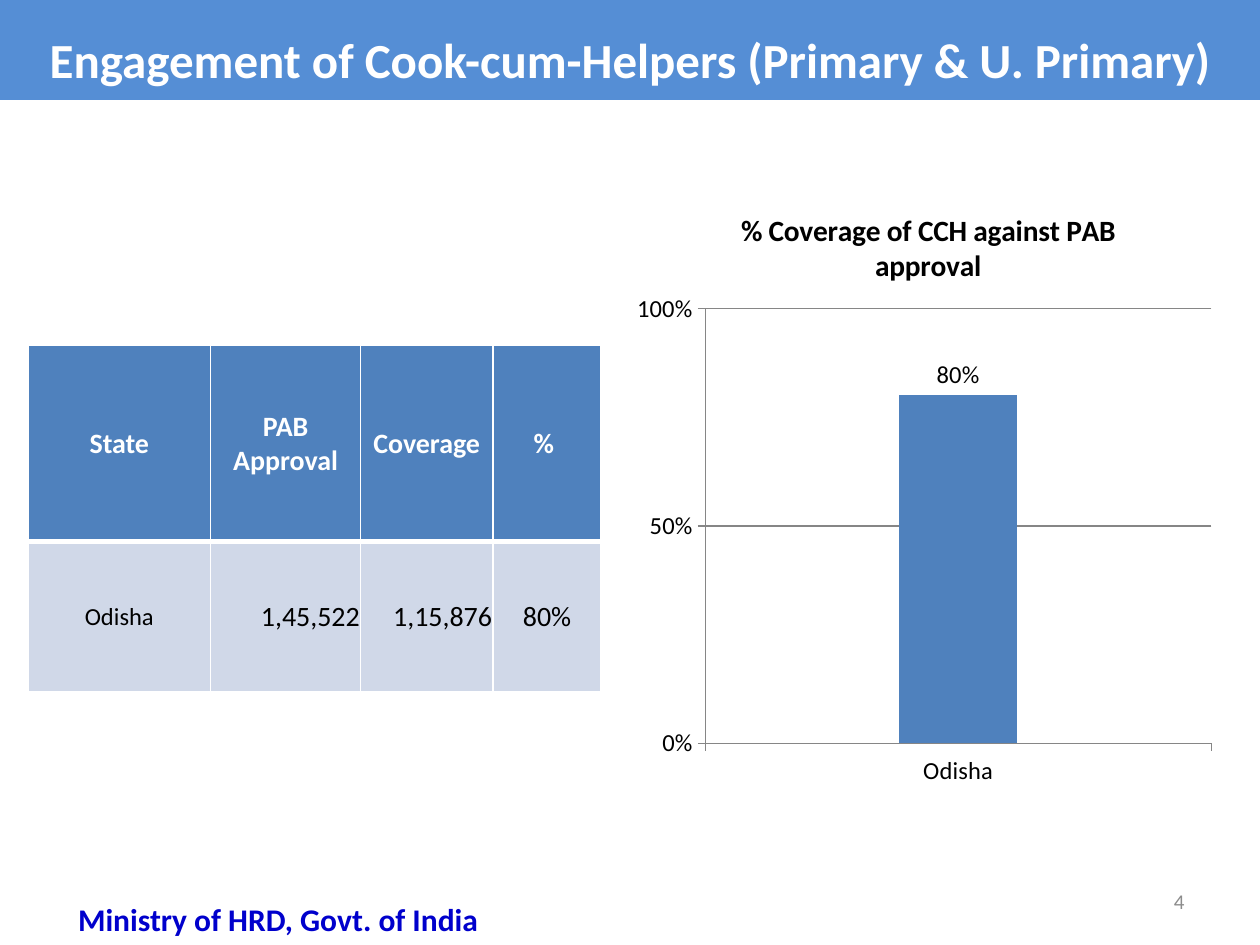
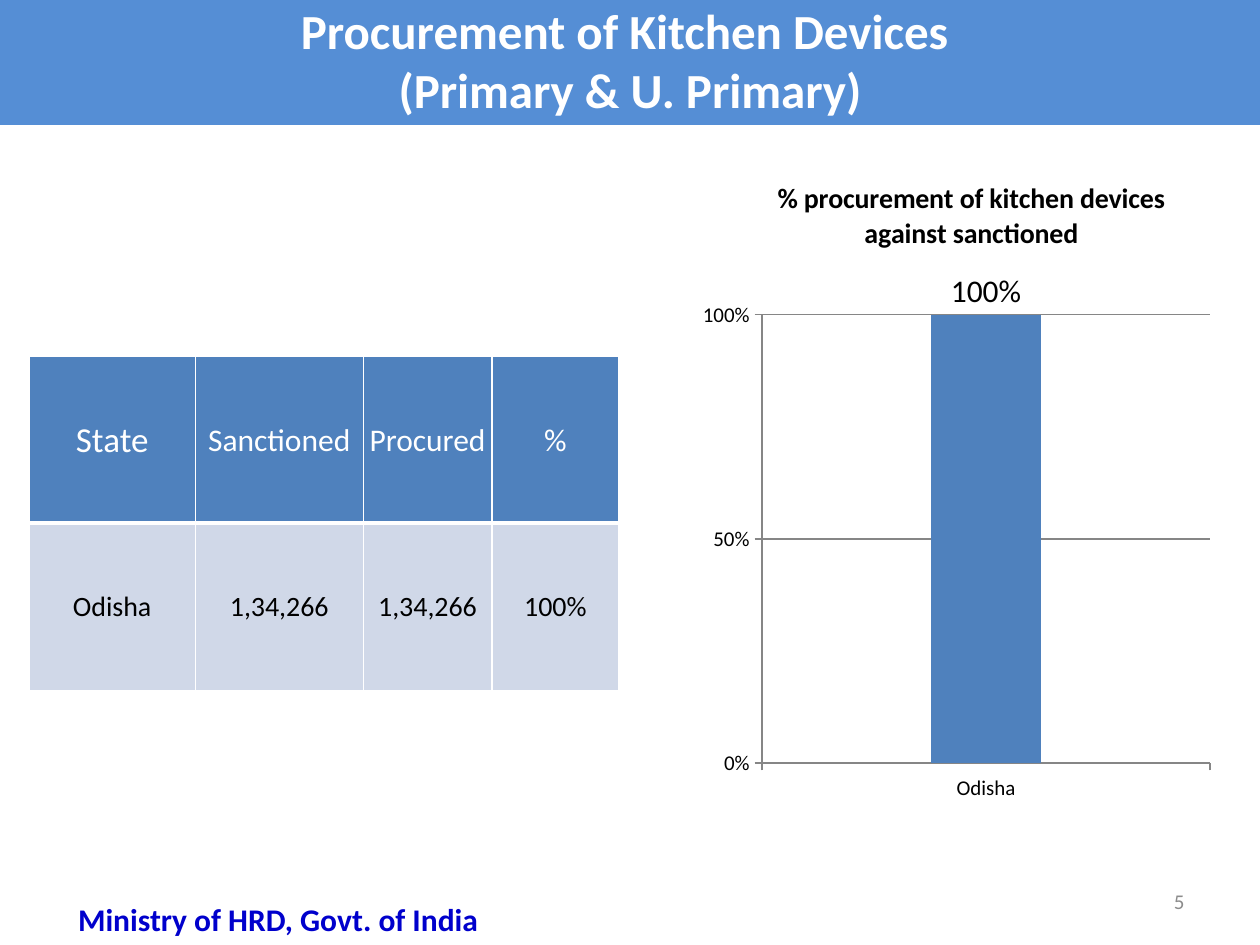
"""Build two slides on cook-cum-helper engagement and kitchen device procurement."""
from lxml import etree
from pptx import Presentation
from pptx.chart.data import CategoryChartData
from pptx.dml.color import RGBColor
from pptx.enum.chart import XL_CHART_TYPE, XL_LABEL_POSITION, XL_TICK_MARK
from pptx.enum.text import MSO_ANCHOR, MSO_AUTO_SIZE, PP_ALIGN
from pptx.oxml import parse_xml
from pptx.oxml.ns import nsdecls, qn
from pptx.util import Pt

FONT = "Calibri"
COLORS = {
    "band": "558ED5", "header": "4F81BD", "row": "D0D8E8", "white": "FFFFFF",
    "black": "000000", "number": "8C8C8C", "ministry": "0000CC", "grid": "868686",
}
MINISTRY = "Ministry of HRD, Govt. of India"
CENTER, RIGHT = PP_ALIGN.CENTER, PP_ALIGN.RIGHT

SLIDES = [
    {
        "number": "4",
        "title": ["Engagement of Cook-cum-Helpers (Primary & U. Primary)"],
        "band": (0, 54),
        "table": {
            "at": (16, 197.3), "columns": (104.4, 85.7, 75.6, 61.9), "rows": (112, 86),
            "header": ["State", "PAB Approval", "Coverage", "% "],
            "header_sizes": (16, 16, 16, 16), "header_bold": True,
            "values": ["Odisha", "1,45,522", "1,15,876", "80%"],
            "value_sizes": (14, 16, 16, 16),
            "value_aligns": (CENTER, RIGHT, RIGHT, CENTER),
        },
        "chart": {
            "at": (354.2, 102.2, 348.5, 370.8),
            "title": "% Coverage of CCH against PAB approval",
            "title_size": 16.8, "title_at": (0.19, 0.04), "share": 0.8,
            "axis_size": 14, "label_size": 14, "gap": 330,
            "plot": (0.14, 0.2, 0.83, 0.67),
        },
    },
    {
        "number": "5",
        "title": ["Procurement of Kitchen Devices ", "(Primary & U. Primary)"],
        "band": (-17.3, 88.6),
        "table": {
            "at": (16.6, 203.8), "columns": (95, 96, 73.5, 72.7), "rows": (95, 96),
            "header": ["State", "Sanctioned", "Procured", "%"],
            "header_sizes": (20, 18, 18, 18), "header_bold": False,
            "values": ["Odisha", "1,34,266", "1,34,266", "100%"],
            "value_sizes": (16, 16, 16, 16),
            "value_aligns": (CENTER, CENTER, CENTER, CENTER),
        },
        "chart": {
            "at": (393.8, 95.8, 298, 382.3),
            "title": "% procurement of kitchen devices against sanctioned",
            "title_size": 16, "title_at": (0.16, 0.01), "share": 1,
            "axis_size": 12, "label_size": 18, "gap": 306,
            "plot": (0.14, 0.22, 0.86, 0.67),
        },
    },
]


def rgb(name):
    return RGBColor.from_string(COLORS[name])


def style_font(font, size, color, bold=False):
    font.name, font.size, font.bold = FONT, Pt(size), bold
    font.color.rgb = rgb(color)


def style_paragraph(paragraph, size, color, bold=False, align=CENTER):
    paragraph.alignment = align
    for run in paragraph.runs:
        style_font(run.font, size, color, bold)


def add_band_title(slide, lines, top, height):
    title = slide.shapes.title
    title.left, title.top, title.width, title.height = Pt(0), Pt(top), Pt(720), Pt(height)
    title.fill.solid()
    title.fill.fore_color.rgb = rgb("band")
    frame = title.text_frame
    frame.text = "\n".join(lines)
    frame.vertical_anchor = MSO_ANCHOR.MIDDLE
    frame.auto_size = MSO_AUTO_SIZE.SHAPE_TO_FIT_TEXT
    for paragraph in frame.paragraphs:
        style_paragraph(paragraph, 28, "white", True)
    frame.paragraphs[0].line_spacing = 1.4


def add_label(slide, text, box, size, color, bold, align, anchor):
    frame = slide.shapes.add_textbox(*map(Pt, box)).text_frame
    frame.word_wrap = True
    frame.vertical_anchor = anchor
    frame.text = text
    style_paragraph(frame.paragraphs[0], size, color, bold, align)


def set_borders(cell, bottom_width):
    properties = cell._tc.get_or_add_tcPr()
    widths = {"L": 1, "R": 1, "T": 1, "B": bottom_width}
    for position, (side, width) in enumerate(widths.items()):
        properties.insert(position, parse_xml(
            f'<a:ln{side} {nsdecls("a")} w="{Pt(width)}"><a:solidFill>'
            f'<a:srgbClr val="{COLORS["white"]}"/></a:solidFill></a:ln{side}>'))


def fill_row(table, row, texts, sizes, aligns, fill, color, bold, bottom_width):
    for column, (text, size, align) in enumerate(zip(texts, sizes, aligns)):
        cell = table.cell(row, column)
        cell.text = text
        cell.vertical_anchor = MSO_ANCHOR.MIDDLE
        cell.margin_left = cell.margin_right = cell.margin_top = Pt(0.5)
        cell.margin_bottom = Pt(0)
        cell.fill.solid()
        cell.fill.fore_color.rgb = rgb(fill)
        style_paragraph(cell.text_frame.paragraphs[0], size, color, bold, align)
        set_borders(cell, bottom_width)


def add_state_table(slide, content):
    widths, heights = content["columns"], content["rows"]
    box = (*content["at"], sum(widths), sum(heights))
    table = slide.shapes.add_table(len(heights), len(widths), *map(Pt, box)).table
    for column, width in zip(table.columns, widths):
        column.width = Pt(width)
    for row, height in zip(table.rows, heights):
        row.height = Pt(height)
    fill_row(table, 0, content["header"], content["header_sizes"], [CENTER] * len(widths),
             "header", "white", content["header_bold"], 3)
    fill_row(table, 1, content["values"], content["value_sizes"], content["value_aligns"],
             "row", "black", False, 1)


def manual_layout(values, inner=False):
    layout = etree.Element(qn("c:layout"))
    manual = etree.SubElement(layout, qn("c:manualLayout"))
    settings = [("layoutTarget", "inner")] if inner else []
    settings += [("xMode", "edge"), ("yMode", "edge"), *zip("xywh", values)]
    for tag, value in settings:
        etree.SubElement(manual, qn(f"c:{tag}")).set("val", str(value))
    return layout


def place(parent, layout, index):
    for old in parent.findall(qn("c:layout")):
        parent.remove(old)
    parent.insert(index, layout)


def add_share_chart(slide, content):
    data = CategoryChartData(number_format="0%")
    data.categories = ["Odisha"]
    data.add_series("Series 1", [content["share"]])
    chart = slide.shapes.add_chart(
        XL_CHART_TYPE.COLUMN_CLUSTERED, *map(Pt, content["at"]), data).chart
    style_font(chart.font, content["label_size"], "black")
    chart.has_legend = False

    heading = chart.chart_title
    heading.text_frame.text = content["title"]
    heading.include_in_layout = False
    style_paragraph(heading.text_frame.paragraphs[0], content["title_size"], "black", True)
    place(heading._element, manual_layout(content["title_at"]), 1)
    place(chart._chartSpace.chart.plotArea, manual_layout(content["plot"], inner=True), 0)

    for axis in (chart.category_axis, chart.value_axis):
        style_font(axis.tick_labels.font, content["axis_size"], "black")
        axis.major_tick_mark = XL_TICK_MARK.OUTSIDE
        axis.format.line.color.rgb = rgb("grid")
    scale = chart.value_axis
    scale.minimum_scale, scale.maximum_scale, scale.major_unit = 0, 1, 0.5
    scale.tick_labels.number_format = "0%"
    scale.tick_labels.number_format_is_linked = False
    scale.has_major_gridlines = True
    scale.major_gridlines.format.line.color.rgb = rgb("grid")

    plot = chart.plots[0]
    plot.gap_width = content["gap"]
    plot.vary_by_categories = False
    columns = plot.series[0]
    columns.format.fill.solid()
    columns.format.fill.fore_color.rgb = rgb("header")
    labels = columns.data_labels
    labels.show_value = True
    labels.number_format, labels.number_format_is_linked = "0%", False
    labels.position = XL_LABEL_POSITION.OUTSIDE_END
    style_font(labels.font, content["label_size"], "black")


def main():
    presentation = Presentation()
    presentation.slide_width, presentation.slide_height = Pt(720), Pt(540)
    for content in SLIDES:
        slide = presentation.slides.add_slide(presentation.slide_layouts[5])
        add_band_title(slide, content["title"], *content["band"])
        add_state_table(slide, content["table"])
        add_share_chart(slide, content["chart"])
        add_label(slide, content["number"], (516, 500.5, 168, 28.8), 12, "number",
                  False, RIGHT, MSO_ANCHOR.MIDDLE)
        add_label(slide, MINISTRY, (18, 511, 282, 29), 18, "ministry",
                  True, CENTER, MSO_ANCHOR.TOP)
    presentation.save("out.pptx")


if __name__ == "__main__":
    main()
